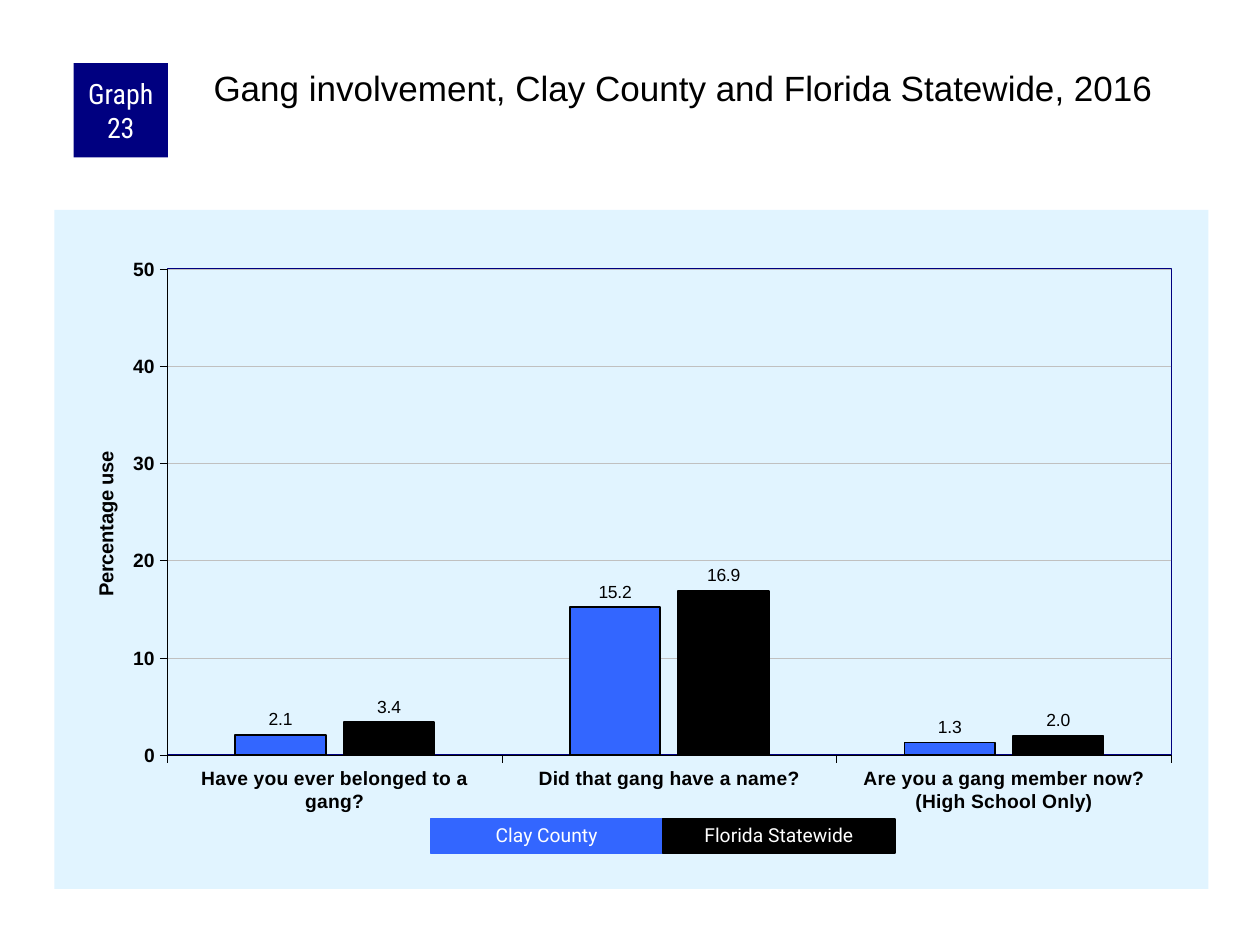
import pptx
import pptx.chart.data
import pptx.dml.color
import pptx.enum.chart
import pptx.enum.shapes
import pptx.enum.text
import pptx.oxml
import pptx.oxml.ns
import pptx.util

Pt = pptx.util.Pt
qn = pptx.oxml.ns.qn
PP_ALIGN = pptx.enum.text.PP_ALIGN
ANCHOR = pptx.enum.text.MSO_ANCHOR

NAVY, BLUE, BLACK, WHITE = "000080", "3366FF", "000000", "FFFFFF"
PALE_BLUE, GREY = "E1F4FF", "C0C0C0"

QUESTIONS = [
    "Have you ever belonged to a gang?",
    "Did that gang have a name?",
    "Are you a gang member now?\n(High School Only)",
]
REGIONS = [
    ("Clay County", BLUE, (2.1, 15.2, 1.3)),
    ("Florida Statewide", BLACK, (3.4, 16.9, 2.0)),
]


def rgb(color):
    return pptx.dml.color.RGBColor.from_string(color)


def set_fill(target, color):
    target.fill.solid()
    target.fill.fore_color.rgb = rgb(color)


def set_line(line, color, width):
    line.color.rgb = rgb(color)
    line.width = Pt(width)


def set_font(font, name, size, color=BLACK, bold=False):
    font.name = name
    font.size = Pt(size)
    font.bold = bold
    font.color.rgb = rgb(color)


def add_run(paragraph, text, name, size, color=BLACK, bold=False):
    run = paragraph.add_run()
    run.text = text
    set_font(run.font, name, size, color, bold)


def set_insets(frame, left, top, right, bottom):
    frame.margin_left, frame.margin_top = Pt(left), Pt(top)
    frame.margin_right, frame.margin_bottom = Pt(right), Pt(bottom)


def add_box(slide, bounds, fill, text, font, size):
    box = slide.shapes.add_shape(
        pptx.enum.shapes.MSO_SHAPE.RECTANGLE, *map(Pt, bounds))
    box.shadow.inherit = False
    set_fill(box, fill)
    box.line.fill.background()
    frame = box.text_frame
    frame.word_wrap = True
    frame.vertical_anchor = ANCHOR.MIDDLE
    set_insets(frame, 3.6, 0, 3.6, 0)
    paragraph = frame.paragraphs[0]
    paragraph.alignment = PP_ALIGN.CENTER
    add_run(paragraph, text, font, size, WHITE)
    return box


def add_heading(slide, text):
    heading = slide.shapes.title
    heading.left, heading.top = Pt(120), Pt(36)
    heading.width, heading.height = Pt(570), Pt(60)
    frame = heading.text_frame
    frame.word_wrap = True
    frame.vertical_anchor = ANCHOR.TOP
    set_insets(frame, 2, 2, 0, 0)
    paragraph = frame.paragraphs[0]
    paragraph.alignment = PP_ALIGN.LEFT
    add_run(paragraph, text, "Arial", 20)


def chart_xml(content):
    return pptx.oxml.parse_xml(content.replace(
        ">", f" {pptx.oxml.ns.nsdecls('c', 'a')}>", 1))


def area_format(fill, line):
    return chart_xml(f"<c:spPr>{fill}<a:ln w=\"12700\">{line}</a:ln></c:spPr>")


def solid(color):
    return f'<a:solidFill><a:srgbClr val="{color}"/></a:solidFill>'


def set_layout(parent, index, target="", **fractions):
    """Place a chart part by fractions of the chart's size."""
    for old in parent.findall(qn("c:layout")):
        parent.remove(old)
    modes = "".join(f'<c:{axis}Mode val="edge"/>' for axis in "xy")
    values = "".join(f'<c:{key} val="{value}"/>' for key, value in fractions.items())
    parent.insert(index, chart_xml(
        f"<c:layout><c:manualLayout>{target}{modes}{values}"
        "</c:manualLayout></c:layout>"))


def format_axis(axis):
    axis.major_tick_mark = pptx.enum.chart.XL_TICK_MARK.OUTSIDE
    axis.minor_tick_mark = pptx.enum.chart.XL_TICK_MARK.NONE
    set_font(axis.tick_labels.font, "Arial", 11, bold=True)
    set_line(axis.format.line, BLACK, 0.25)


def format_value_axis(axis):
    format_axis(axis)
    axis.minimum_scale, axis.maximum_scale, axis.major_unit = 0, 50, 10
    axis.has_major_gridlines = True
    set_line(axis.major_gridlines.format.line, GREY, 0.25)
    axis.tick_labels.number_format = "0"
    axis.tick_labels.number_format_is_linked = False
    paragraph = axis.axis_title.text_frame.paragraphs[0]
    add_run(paragraph, "Percentage use", "Arial", 11.5, bold=True)
    title = axis._element.find(qn("c:title"))
    set_layout(title, 1, x=0.03, y=0.35)


def format_series(series, color):
    set_fill(series.format, color)
    set_line(series.format.line, BLACK, 1)
    series.invert_if_negative = False
    labels = series.data_labels
    labels.show_value = True
    labels.number_format = "0.0"
    labels.number_format_is_linked = False
    labels.position = pptx.enum.chart.XL_LABEL_POSITION.OUTSIDE_END
    set_font(labels.font, "Arial", 10)


def add_gang_chart(slide):
    data = pptx.chart.data.CategoryChartData(number_format="0.0")
    data.categories = QUESTIONS
    for region, _, percentages in REGIONS:
        data.add_series(region, percentages)
    chart = slide.shapes.add_chart(
        pptx.enum.chart.XL_CHART_TYPE.COLUMN_CLUSTERED,
        Pt(31), Pt(120), Pt(659.5), Pt(388), data).chart
    chart.has_legend = False
    chart.has_title = False
    set_font(chart.font, "Arial", 11.5)

    format_axis(chart.category_axis)
    format_value_axis(chart.value_axis)
    plot = chart.plots[0]
    plot.gap_width, plot.overlap = 150, -20
    plot.vary_by_categories = False
    for series, (_, color, _) in zip(plot.series, REGIONS):
        format_series(series, color)

    chart_part = chart._chartSpace.find(qn("c:chart"))
    chart_part.addnext(area_format(solid(PALE_BLUE), "<a:noFill/>"))
    plot_area = chart_part.find(qn("c:plotArea"))
    set_layout(plot_area, 0, '<c:layoutTarget val="inner"/>',
               x=0.098, y=0.087, w=0.87, h=0.716)
    plot_area.append(area_format("<a:noFill/>", solid(NAVY)))


def add_legend(slide):
    left, width = 246, 132.75
    for index, (region, color, _) in enumerate(REGIONS):
        key = add_box(slide, (left + index * width, 468, width, 19.5),
                      color, region, "Roboto", 11)
        set_line(key.line, color, 0.75)
        key.text_frame.paragraphs[0].line_spacing = 0.9


def main():
    deck = pptx.Presentation()
    deck.slide_width, deck.slide_height = Pt(720), Pt(540)
    slide = deck.slides.add_slide(deck.slide_layouts[5])
    add_gang_chart(slide)
    add_box(slide, (42, 36, 54, 54), NAVY, "Graph 23", "Roboto Condensed", 16)
    add_heading(slide, "Gang involvement, Clay County and Florida Statewide, 2016")
    add_legend(slide)
    deck.save("out.pptx")


if __name__ == "__main__":
    main()
